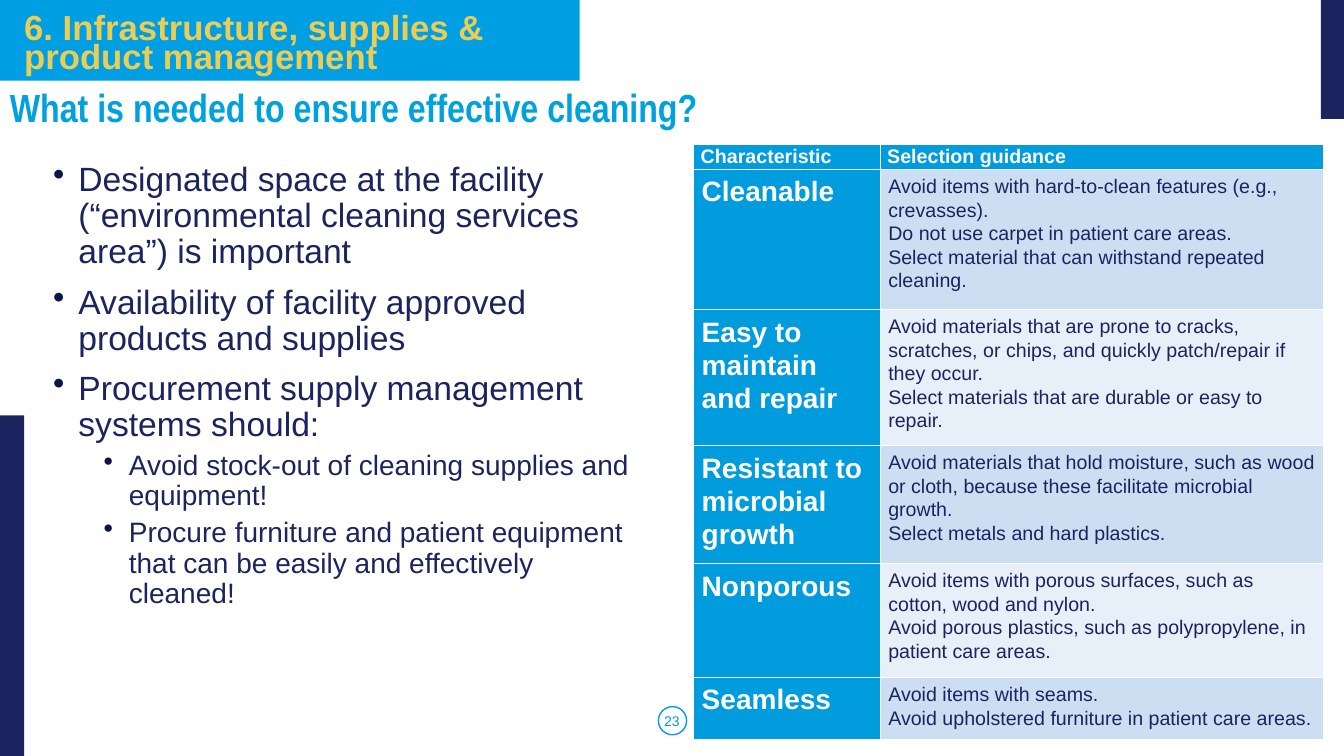
"""Build the slide on supplies and surfaces for effective cleaning."""
from pptx import Presentation
from pptx.dml.color import RGBColor
from pptx.enum.shapes import MSO_SHAPE
from pptx.enum.text import MSO_ANCHOR, PP_ALIGN
from pptx.oxml import parse_xml
from pptx.oxml.ns import nsdecls
from pptx.util import Pt

RECT, OVAL = MSO_SHAPE.RECTANGLE, MSO_SHAPE.OVAL
MIDDLE, CENTER = MSO_ANCHOR.MIDDLE, PP_ALIGN.CENTER
PX = 9144
THEME = {
    "sky": "009EE3", "navy": "1C245F", "gold": "EACD54", "title": "00A1DF",
    "head": "009CDE", "white": "FFFFFF", "dot": "09164D",
    "bands": ("CCDEF2", "E7EFF9"), "font": "Arial", "narrow": "Arial Narrow",
    "banner": 24.8, "large": 28, "body": 24, "sub": 20, "cell": 14, "small": 10,
}


def write(frame, lines, size, color, bold=False, font=THEME["font"], space=None):
    """Fill a text frame with evenly styled paragraphs."""
    frame.word_wrap = True
    frame.text = "\n".join(lines)
    for para in frame.paragraphs:
        para.line_spacing = space
        for run in para.runs:
            run.font.size = Pt(THEME[size])
            run.font.name = font
            run.font.bold = bold
            run.font.color.rgb = RGBColor.from_string(THEME[color])


def add_box(x, y, w, h):
    """Return the text frame of a new text box."""
    return slide.shapes.add_textbox(x * PX, y * PX, w * PX, h * PX).text_frame


deck = Presentation()
deck.slide_width, deck.slide_height = 1333 * PX, 750 * PX
slide = deck.slides.add_slide(deck.slide_layouts[6])

for kind, x, y, w, h, color in [
    (RECT, 0, 0, 575, 80, "sky"),
    (RECT, 0, 412, 24, 338, "navy"),
    (RECT, 1310, 0, 23, 118, "navy"),
    (OVAL, 653, 701, 28, 28, None),
]:
    shape = slide.shapes.add_shape(kind, x * PX, y * PX, w * PX, h * PX)
    shape.shadow.inherit = False
    if color:
        shape.fill.solid()
        shape.fill.fore_color.rgb = RGBColor.from_string(THEME[color])
        shape.line.fill.background()
    else:
        shape.fill.background()
        shape.line.color.rgb = RGBColor.from_string(THEME["sky"])
        shape.line.width = Pt(1)

banner = add_box(14, 12, 528, 69)
write(banner, ["6. Infrastructure, supplies & product management"],
      "banner", "gold", True, space=0.7)
banner.paragraphs[0].space_before = Pt(10)

title = add_box(0, 78, 705, 57)
write(title, ["What is needed to ensure effective cleaning?"],
      "large", "title", True, THEME["narrow"])

points = [
    (0, "Designated space at the facility (“environmental cleaning services area”) is important"),
    (0, "Availability of facility approved products and supplies"),
    (0, "Procurement supply management systems should:"),
    (1, "Avoid stock-out of cleaning supplies and equipment!"),
    (1, "Procure furniture and patient equipment that can be easily and effectively cleaned!"),
]
body = add_box(43, 156, 604, 509)
write(body, [text for level, text in points], "body", "navy", space=0.9)
for para, (level, text) in zip(body.paragraphs, points):
    para.level = level
    para.space_before = Pt(5 if level else 10)
    para.runs[0].font.size = Pt(THEME["sub" if level else "body"])
    props = para._p.get_or_add_pPr()
    props.set("marL", str((25 + 50 * level) * PX))
    props.set("indent", str(-25 * PX))
    props.append(parse_xml(
        f'<a:buClr {nsdecls("a")}><a:srgbClr val="{THEME["dot"]}"/></a:buClr>'))
    props.append(parse_xml(f'<a:buChar {nsdecls("a")} char="•"/>'))

number = add_box(0, 695, 1333, 40)
write(number, ["23"], "small", "sky")
number.vertical_anchor = MIDDLE
number.paragraphs[0].alignment = CENTER

rows = [
    (25, "Characteristic", ["Selection guidance"]),
    (139, "Cleanable", [
        "Avoid items with hard-to-clean features (e.g., crevasses).",
        "Do not use carpet in patient care areas.",
        "Select material that can withstand repeated cleaning."]),
    (135, "Easy to maintain and repair", [
        "Avoid materials that are prone to cracks, scratches, or chips, "
        "and quickly patch/repair if they occur.",
        "Select materials that are durable or easy to repair."]),
    (117, "Resistant to microbial growth", [
        "Avoid materials that hold moisture, such as wood or cloth, "
        "because these facilitate microbial growth.",
        "Select metals and hard plastics."]),
    (113, "Nonporous", [
        "Avoid items with porous surfaces, such as cotton, wood and nylon.",
        "Avoid porous plastics, such as polypropylene, in patient care areas."]),
    (62, "Seamless", [
        "Avoid items with seams.",
        "Avoid upholstered furniture in patient care areas."]),
]
height = sum(row[0] for row in rows)
table = slide.shapes.add_table(
    len(rows), 2, 688 * PX, 143 * PX, 625 * PX, height * PX).table
for col, width in zip(table.columns, (185, 440)):
    col.width = width * PX
for r, (tall, name, guide) in enumerate(rows):
    table.rows[r].height = tall * PX
    for c, lines in enumerate(([name], guide)):
        cell = table.cell(r, c)
        strong = r == 0 or c == 0
        side, edge = (8, 5) if r else (7, 0)
        cell.margin_left = cell.margin_right = side * PX
        cell.margin_top = cell.margin_bottom = edge * PX
        cell.fill.solid()
        fill = THEME["head"] if strong else THEME["bands"][(r - 1) % 2]
        cell.fill.fore_color.rgb = RGBColor.from_string(fill)
        write(cell.text_frame, lines, "sub" if r and c == 0 else "cell",
              "white" if strong else "navy", strong, space=1.07)

deck.save("out.pptx")
